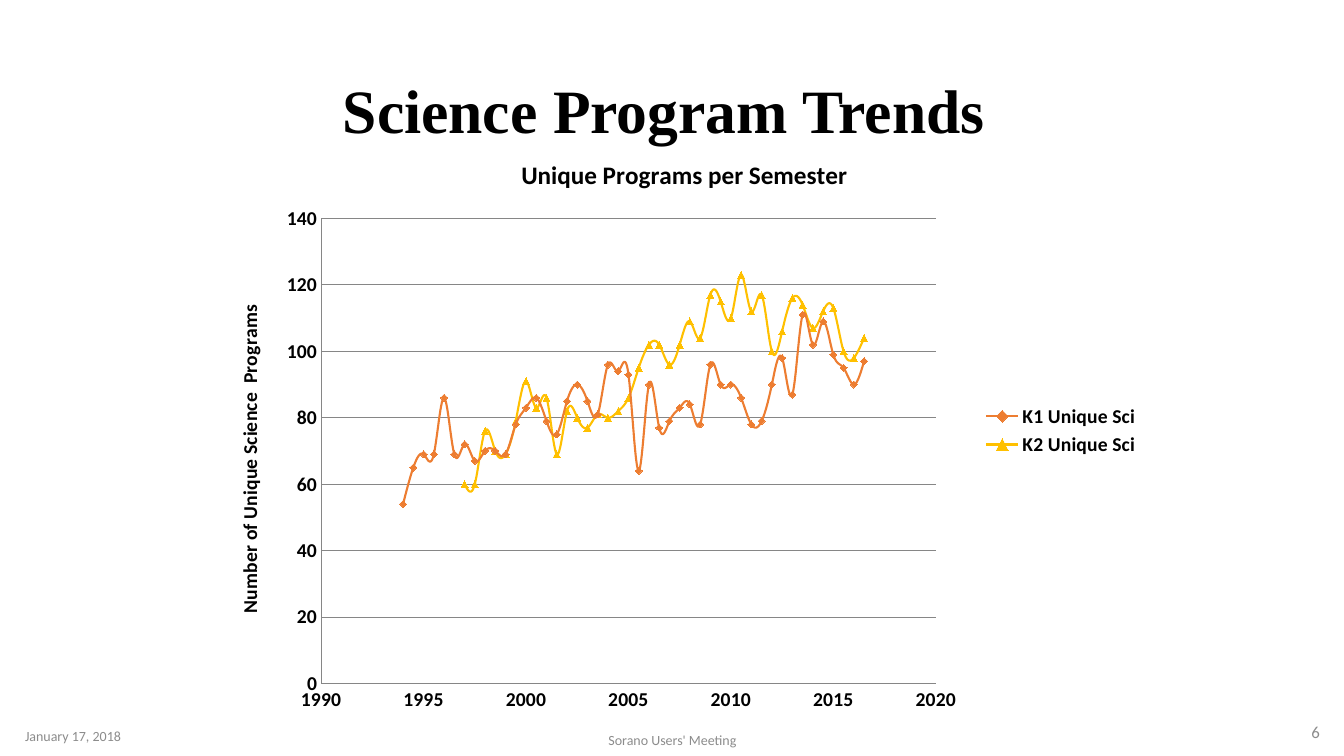
from pptx import Presentation
from pptx.chart.data import XyChartData
from pptx.dml.color import RGBColor
from pptx.enum.chart import (XL_CHART_TYPE, XL_LEGEND_POSITION,
                             XL_MARKER_STYLE, XL_TICK_MARK)
from pptx.enum.text import MSO_ANCHOR, PP_ALIGN
from pptx.oxml import parse_xml
from pptx.oxml.ns import nsdecls, qn
from pptx.util import Pt

COLORS = {"ink": "000000", "gray": "8C8C8C", "rule": "868686",
          "orange": "ED7D31", "gold": "FFC000"}
STEP = 0.5
SERIES = [
    ("K1 Unique Sci", 1994, "orange", XL_MARKER_STYLE.DIAMOND,
     [54, 65, 69, 69, 86, 69, 72, 67, 70, 70, 69, 78, 83, 86, 79, 75,
      85, 90, 85, 81, 96, 94, 93, 64, 90, 77, 79, 83, 84, 78, 96, 90,
      90, 86, 78, 79, 90, 98, 87, 111, 102, 109, 99, 95, 90, 97]),
    ("K2 Unique Sci", 1997, "gold", XL_MARKER_STYLE.TRIANGLE,
     [60, 60, 76, 70, 69, 79, 91, 83, 86, 69, 82, 80, 77, 81, 80, 82,
      86, 95, 102, 102, 96, 102, 109, 104, 117, 115, 110, 123, 112, 117,
      100, 106, 116, 114, 107, 112, 113, 100, 98, 104]),
]


def color(name):
    return RGBColor.from_string(COLORS[name])


def style(font, size, bold=False, ink="ink", face="Calibri"):
    font.name = face
    font.size = Pt(size)
    font.bold = bold
    font.color.rgb = color(ink)


def add_text(slide, box, text, align, size, **look):
    frame = slide.shapes.add_textbox(*map(Pt, box)).text_frame
    frame.word_wrap = True
    frame.vertical_anchor = MSO_ANCHOR.MIDDLE
    para = frame.paragraphs[0]
    para.text = text
    para.alignment = align
    style(para.font, size, **look)
    return para


def add_title(slide, box):
    para = add_text(slide, box, "Science Program Trends ", PP_ALIGN.CENTER,
                    44, bold=True, face="Times New Roman")
    para.line_spacing = 0.9


def set_axis(axis, low, high, unit):
    axis.minimum_scale, axis.maximum_scale = low, high
    axis.major_unit = unit
    axis.major_tick_mark = axis.minor_tick_mark = XL_TICK_MARK.NONE
    axis.tick_labels.number_format = "General"
    axis.tick_labels.number_format_is_linked = False
    style(axis.tick_labels.font, 14, bold=True)
    set_line(axis.format.line, "rule", 0.75)


def set_line(line, name, width):
    line.color.rgb = color(name)
    line.width = Pt(width)


def set_head(title, text, size):
    para = title.text_frame.paragraphs[0]
    para.text = text
    style(para.font, size, bold=True)


def set_plot(chart, x, y, wide, high):
    area = chart._chartSpace.chart.plotArea
    for old in area.findall(qn("c:layout")):
        area.remove(old)
    parts = "".join(f'<c:{tag} val="{val}"/>' for tag, val in [
        ("layoutTarget", "inner"), ("xMode", "edge"), ("yMode", "edge"),
        ("x", x), ("y", y), ("w", wide), ("h", high)])
    area.insert(0, parse_xml(
        f'<c:layout {nsdecls("c")}><c:manualLayout>{parts}'
        '</c:manualLayout></c:layout>'))


def set_curve(line, name, mark):
    set_line(line.format.line, name, 1.5)
    line.marker.style = mark
    line.marker.size = 5
    line.marker.format.fill.solid()
    line.marker.format.fill.fore_color.rgb = color(name)
    set_line(line.marker.format.line, name, 0.75)
    line._element.find(qn("c:smooth")).set("val", "1")


def add_trends(slide, box):
    data = XyChartData()
    for name, start, _, _, counts in SERIES:
        series = data.add_series(name)
        for i, count in enumerate(counts):
            series.add_data_point(start + i * STEP, count)
    chart = slide.shapes.add_chart(XL_CHART_TYPE.XY_SCATTER_SMOOTH,
                                   *map(Pt, box), data).chart
    style(chart.font, 10)
    chart.has_title = True
    set_head(chart.chart_title, "Unique Programs per Semester", 18)
    chart.has_legend = True
    chart.legend.position = XL_LEGEND_POSITION.RIGHT
    chart.legend.include_in_layout = False
    style(chart.legend.font, 14, bold=True)
    years, counts = chart.category_axis, chart.value_axis
    set_axis(years, 1990, 2020, 5)
    set_axis(counts, 0, 140, 20)
    years.has_major_gridlines = False
    counts.has_major_gridlines = True
    set_line(counts.major_gridlines.format.line, "rule", 0.75)
    set_head(counts.axis_title, "Number of Unique Science  Programs", 14)
    plot = chart.plots[0]
    plot.vary_by_categories = False
    for line, (_, _, name, mark, _) in zip(plot.series, SERIES):
        set_curve(line, name, mark)
    set_plot(chart, 0.11, 0.14, 0.66, 0.79)


def add_footer(slide, box):
    left, top, wide, high = box
    add_text(slide, (left, top + 3, 216, high), "January 17, 2018",
             PP_ALIGN.LEFT, 10, ink="gray")
    add_text(slide, (left + (wide - 324) / 2, top + 6, 324, high),
             "Sorano Users' Meeting", PP_ALIGN.CENTER, 10, ink="gray")
    add_text(slide, (left + wide - 216, top, 216, high), "6",
             PP_ALIGN.RIGHT, 12, ink="gray")


def main():
    deck = Presentation()
    deck.slide_width, deck.slide_height = Pt(960), Pt(540)
    slide = deck.slides.add_slide(deck.slide_layouts[6])
    add_title(slide, (66, 28.8, 828, 104.4))
    add_trends(slide, (156.2, 97.2, 665.3, 420.5))
    add_footer(slide, (10.8, 508.3, 939, 28.8))
    deck.save("out.pptx")


if __name__ == "__main__":
    main()
